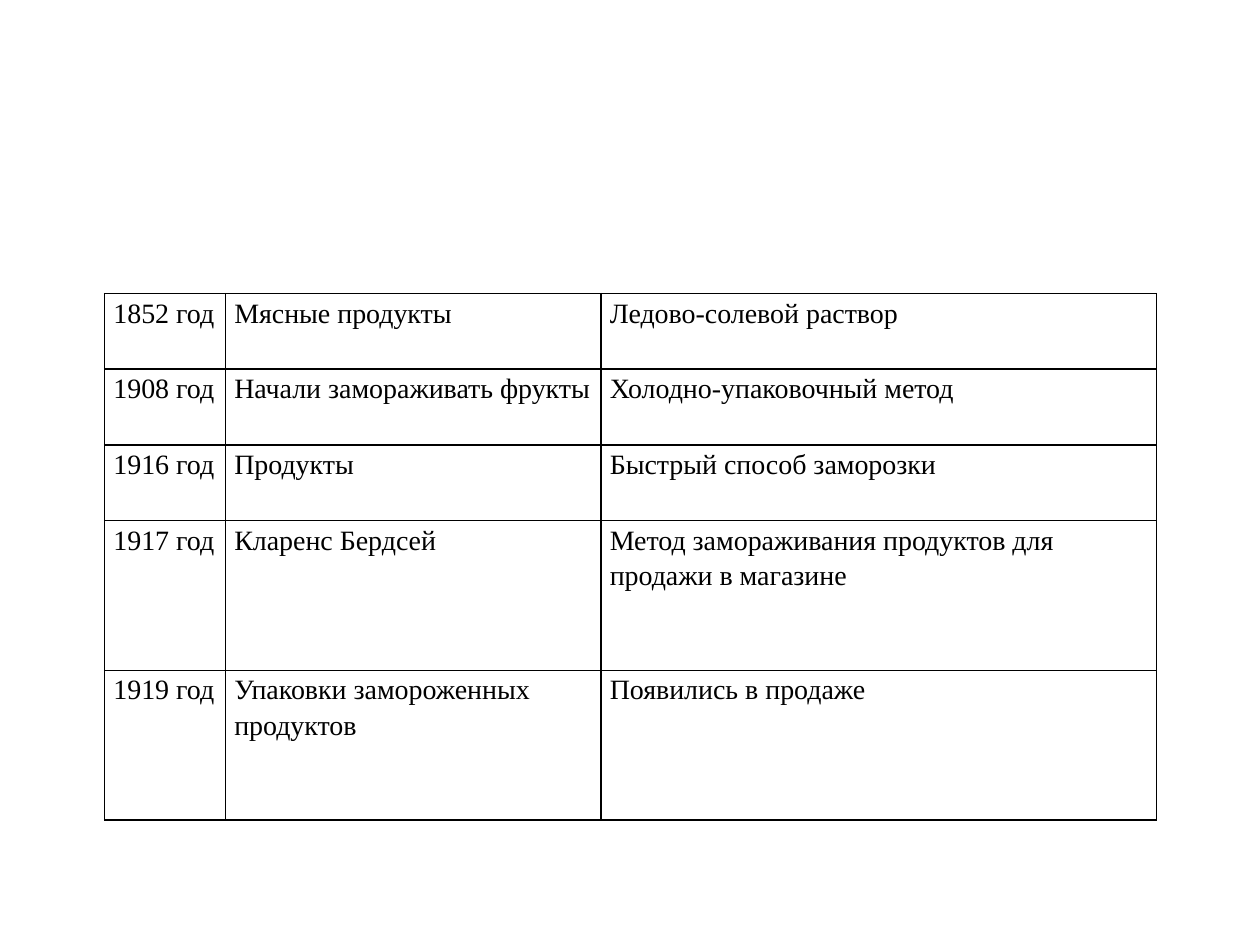
from lxml import etree
from pptx import Presentation
from pptx.dml.color import RGBColor
from pptx.oxml.ns import qn
from pptx.util import Inches, Pt

FONT = "Times New Roman"
INK = "000000"
BLANK_LAYOUT = 6
LEFT, TOP = 0.83, 2.33
COLUMN_WIDTHS = [0.96, 2.98, 4.41]
ROW_UNIT = 0.6
ROW_HEIGHTS = [ROW_UNIT] * 3 + [1.19] * 2

HISTORY = [
    ("1852 год", "Мясные продукты", "Ледово-солевой раствор"),
    ("1908 год", "Начали замораживать фрукты", "Холодно-упаковочный метод"),
    ("1916 год", "Продукты", "Быстрый способ заморозки"),
    ("1917 год", "Кларенс Бердсей",
     "Метод замораживания продуктов для продажи в магазине"),
    ("1919 год", "Упаковки замороженных продуктов", "Появились в продаже"),
]


def color(value):
    return RGBColor.from_string(value)


def write_text(frame, text, size=16, font=FONT, ink=INK, spacing=1.15):
    para = frame.paragraphs[0]
    para.line_spacing = spacing
    span = para.add_run()
    span.text = text
    span.font.size = Pt(size)
    span.font.name = font
    span.font.color.rgb = color(ink)


def add_borders(cell, width=1, ink=INK):
    properties = cell._tc.get_or_add_tcPr()
    # Border lines come before the fill in the cell properties
    for index, side in enumerate(("lnL", "lnR", "lnT", "lnB")):
        line = etree.Element(qn(f"a:{side}"), w=str(Pt(width)))
        fill = etree.SubElement(line, qn("a:solidFill"))
        etree.SubElement(fill, qn("a:srgbClr"), val=ink)
        properties.insert(index, line)


def format_cell(cell, text):
    cell.margin_left = cell.margin_right = Inches(0.07)
    cell.margin_top = cell.margin_bottom = 0
    cell.fill.background()
    add_borders(cell)
    write_text(cell.text_frame, text)


def add_history_table(page):
    table = page.shapes.add_table(
        len(ROW_HEIGHTS), len(COLUMN_WIDTHS), Inches(LEFT), Inches(TOP),
        Inches(sum(COLUMN_WIDTHS)), Inches(sum(ROW_HEIGHTS))).table
    table.first_row = table.horz_banding = False
    for column, width in zip(table.columns, COLUMN_WIDTHS):
        column.width = Inches(width)
    for row, height, texts in zip(table.rows, ROW_HEIGHTS, HISTORY):
        row.height = Inches(height)
        for cell, text in zip(row.cells, texts):
            format_cell(cell, text)


def main():
    deck = Presentation()
    deck.slide_width, deck.slide_height = Inches(10), Inches(7.5)
    page = deck.slides.add_slide(deck.slide_layouts[BLANK_LAYOUT])
    add_history_table(page)
    deck.save("out.pptx")


if __name__ == "__main__":
    main()
